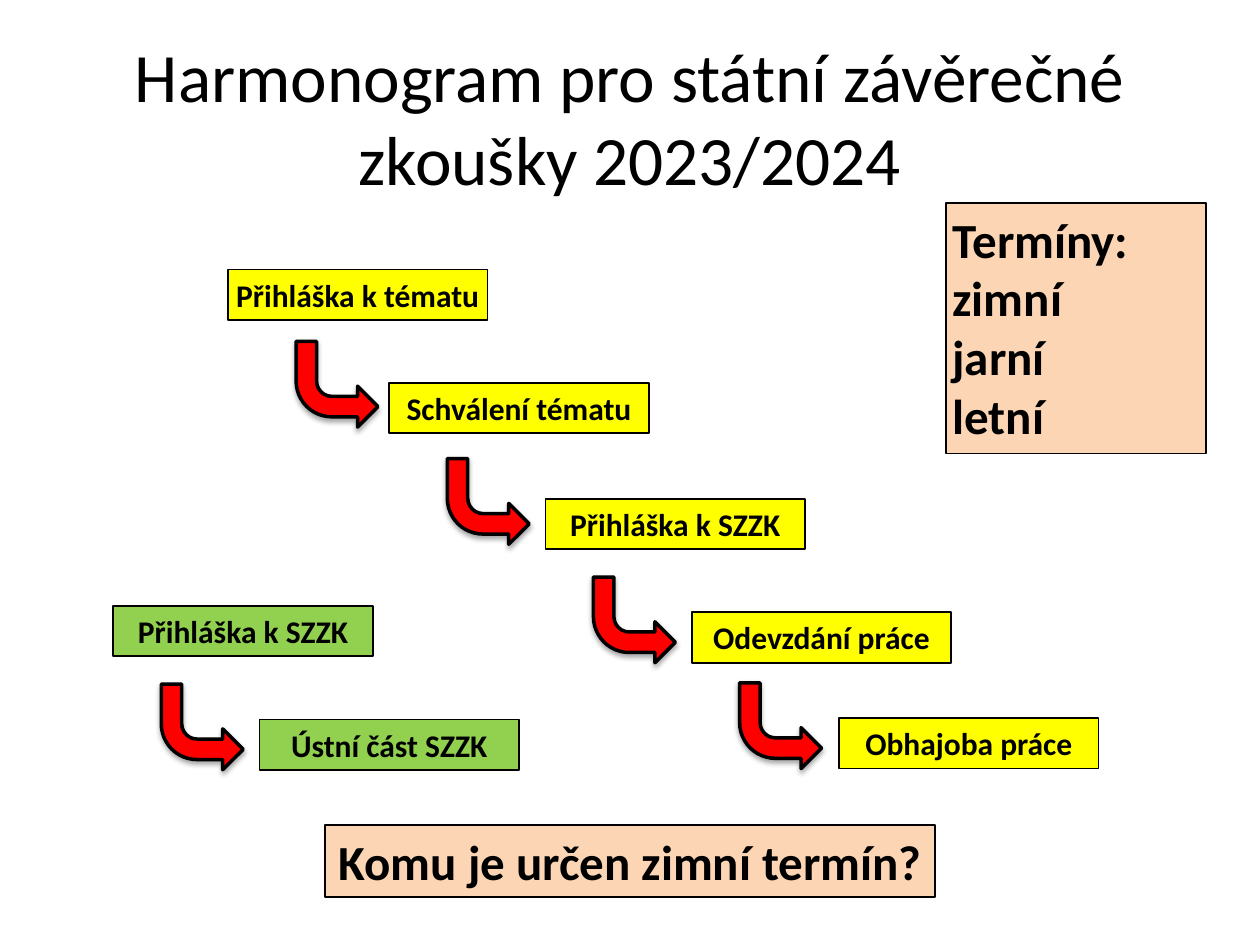
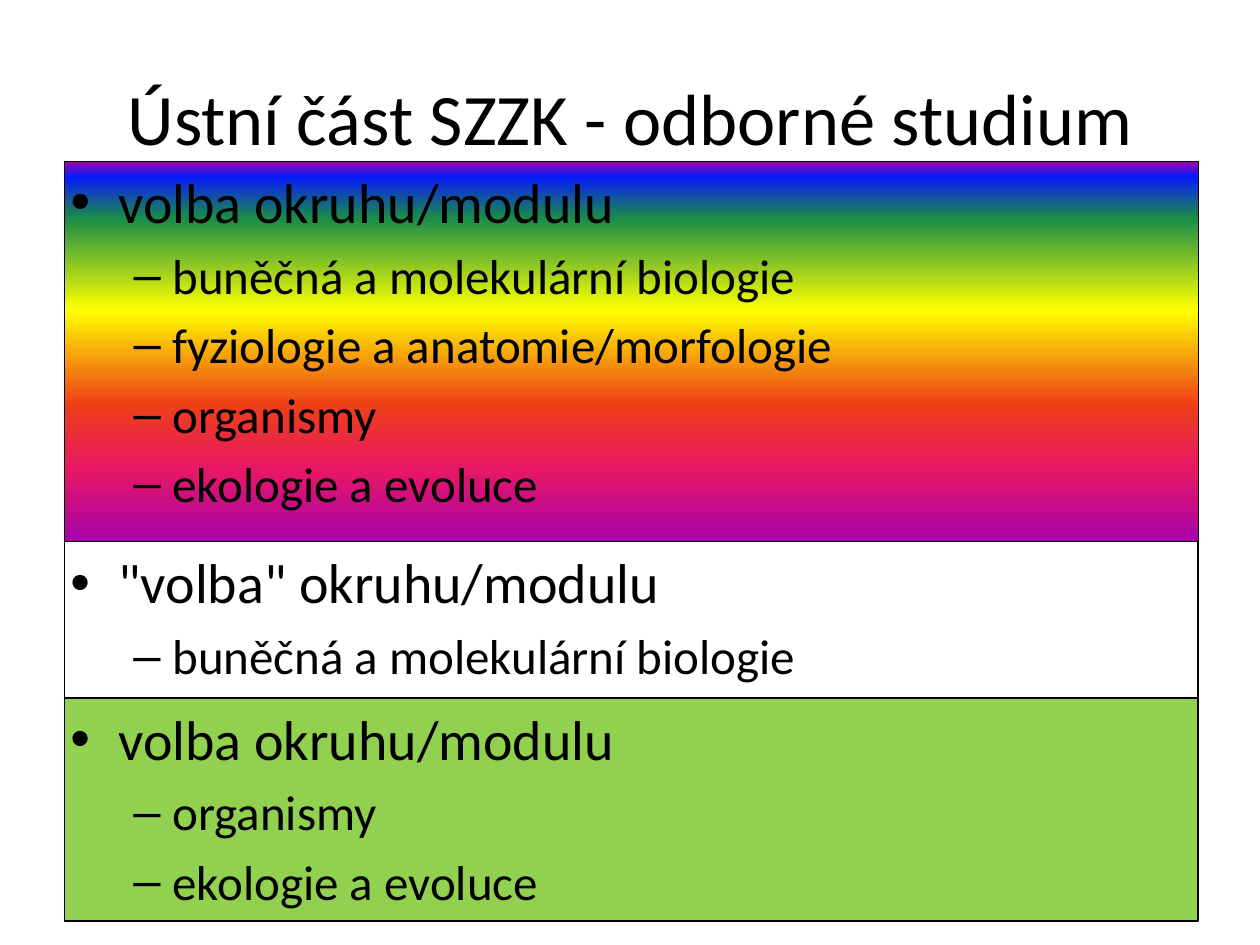
from lxml import etree
from pptx import Presentation
from pptx.dml.color import RGBColor
from pptx.enum.shapes import MSO_SHAPE
from pptx.enum.text import MSO_ANCHOR, MSO_AUTO_SIZE, PP_ALIGN
from pptx.oxml.ns import qn
from pptx.util import Inches, Pt

RECT, BENT_ARROW = MSO_SHAPE.RECTANGLE, MSO_SHAPE.BENT_ARROW
TOP, MIDDLE = MSO_ANCHOR.TOP, MSO_ANCHOR.MIDDLE
LEFT, CENTER = PP_ALIGN.LEFT, PP_ALIGN.CENTER
NO_FIT = MSO_AUTO_SIZE.NONE

BLACK = RGBColor(0x00, 0x00, 0x00)
YELLOW = RGBColor(0xFF, 0xFF, 0x00)
GREEN = RGBColor(0x92, 0xD0, 0x50)
PEACH = RGBColor(0xFC, 0xD5, 0xB5)
RED = RGBColor(0xFF, 0x00, 0x00)
RAINBOW = [
    (0, RGBColor(0xA6, 0x03, 0xAB)), (4, RGBColor(0x08, 0x19, 0xFB)),
    (15, RGBColor(0x1A, 0x8D, 0x48)), (39, YELLOW),
    (64, RGBColor(0xEE, 0x3F, 0x17)), (81, RGBColor(0xE8, 0x17, 0x66)),
    (100, RGBColor(0xA6, 0x03, 0xAB)),
]
FONT = "Calibri"
WIDTH, HEIGHT = 10, 7.5
TITLE_AT = (0.5, 0.3, 9, 1.25)
STEP_W, STEP_H = 2.06, 0.4
ARROW_W, ARROW_H = 0.65, 0.68

# Text, left and top of each step, then left and top of the arrow leading to it
THESIS_STEPS = [
    ("Přihláška k tématu", (1.81, 2.14), None),
    ("Schválení tématu", (3.09, 3.04), (2.35, 2.71)),
    ("Přihláška k SZZK", (4.33, 3.96), (3.55, 3.64)),
    ("Odevzdání práce", (5.49, 4.86), (4.71, 4.58)),
    ("Obhajoba práce", (6.66, 5.7), (5.87, 5.42)),
]
ORAL_STEPS = [
    ("Přihláška k SZZK", (0.9, 4.81), None),
    ("Ústní část SZZK", (2.06, 5.71), (1.28, 5.43)),
]

# Bullet, left margin, hanging indent, space before and size of each list level
LEVELS = [("•", 0.38, 0.38, 7, 32), ("–", 0.81, 0.31, 6, 28)]


def place(sp, at):
    sp.left, sp.top, sp.width, sp.height = map(Inches, at)


def outline(sp, width):
    sp.line.color.rgb = BLACK
    sp.line.width = Pt(width)


def set_font(p, size, bold=False):
    p.font.name = FONT
    p.font.size = Pt(size)
    p.font.bold = bold
    p.font.color.rgb = BLACK


def set_frame(tf, anchor):
    tf.word_wrap = True
    tf.auto_size = NO_FIT
    tf.vertical_anchor = anchor
    tf.margin_left = tf.margin_right = Inches(0.05)
    tf.margin_top = tf.margin_bottom = Inches(0.05)


def add_slide(prs, layout, title, size):
    s = prs.slides.add_slide(prs.slide_layouts.get_by_name(layout))
    sp = s.shapes.title
    place(sp, TITLE_AT)
    tf = sp.text_frame
    set_frame(tf, MIDDLE)
    tf.text = title
    tf.paragraphs[0].alignment = CENTER
    set_font(tf.paragraphs[0], size)
    return s


def add_rect(s, at, line_width, fill=None):
    sp = s.shapes.add_shape(RECT, *map(Inches, at))
    sp.shadow.inherit = False
    if fill is None:
        sp.fill.background()
    else:
        sp.fill.solid()
        sp.fill.fore_color.rgb = fill
    outline(sp, line_width)
    return sp


def add_label(s, text, at, fill, size, align=CENTER):
    tf = add_rect(s, at, 1, fill).text_frame
    set_frame(tf, TOP)
    tf.text = text
    for p in tf.paragraphs:
        p.alignment = align
        set_font(p, size, bold=True)


def add_arrow(s, left, top):
    sp = s.shapes.add_shape(BENT_ARROW, *map(Inches, (left, top, ARROW_W, ARROW_H)))
    sp.fill.solid()
    sp.fill.fore_color.rgb = RED
    outline(sp, 2)
    sp.shadow.inherit = False
    # Flip the bend downwards and add a soft shadow below
    spPr = sp._element.spPr
    spPr.find(qn("a:xfrm")).set("flipV", "1")
    shadow = etree.SubElement(
        spPr.find(qn("a:effectLst")), qn("a:outerShdw"), blurRad=str(Pt(3)),
        dist=str(Pt(1.8)), dir="5400000", rotWithShape="0")
    color = etree.SubElement(shadow, qn("a:srgbClr"), val=str(BLACK))
    etree.SubElement(color, qn("a:alpha"), val="35000")


def add_steps(s, steps, fill):
    for text, corner, arrow in steps:
        add_label(s, text, (*corner, STEP_W, STEP_H), fill, 18)
        if arrow:
            add_arrow(s, *arrow)


def fill_rainbow(sp):
    sp.fill.gradient()
    sp.fill.gradient_angle = 270
    stops = sp._element.spPr.find(".//" + qn("a:gsLst"))
    for stop in list(stops):
        stops.remove(stop)
    for share, color in RAINBOW:
        stop = etree.SubElement(stops, qn("a:gs"), pos=str(share * 1000))
        etree.SubElement(stop, qn("a:srgbClr"), val=str(color))


def write_list(sp, heading, items):
    tf = sp.text_frame
    set_frame(tf, TOP)
    tf.text = "\n".join([heading, *items])
    for i, p in enumerate(tf.paragraphs):
        p.level = min(i, 1)
        bullet, margin, hanging, space, size = LEVELS[p.level]
        p.alignment = LEFT
        p.space_before = Pt(space)
        set_font(p, size)
        pPr = p._p.get_or_add_pPr()
        pPr.set("marL", str(Inches(margin)))
        pPr.set("indent", str(-Inches(hanging)))
        mark = etree.Element(qn("a:buChar"), char=bullet)
        pPr.find(qn("a:defRPr")).addprevious(mark)
        face = etree.Element(qn("a:buFont"), typeface="Arial")
        mark.addprevious(face)


def build_schedule(prs):
    s = add_slide(prs, "Title Only",
                  "Harmonogram pro státní závěrečné zkoušky 2023/2024", 39.6)
    add_steps(s, THESIS_STEPS, YELLOW)
    add_steps(s, ORAL_STEPS, GREEN)
    add_label(s, "Termíny:\nzimní\njarní\nletní", (7.51, 1.61, STEP_W, 1.99),
              PEACH, 28, LEFT)
    question_w = 4.84
    add_label(s, "Komu je určen zimní termín?",
              ((WIDTH - question_w) / 2, 6.55, question_w, 0.57), PEACH, 28)


def build_oral_exam(prs):
    s = add_slide(prs, "Title and Content", "Ústní část SZZK - odborné studium", 41.4)
    left, width = 0.51, 9
    cells, organisms = "buněčná a molekulární biologie", ["organismy", "ekologie a evoluce"]

    # All modules
    body = s.placeholders[1]
    place(body, (left, 1.28, width, 3.02))
    fill_rainbow(body)
    outline(body, 0.75)
    write_list(body, "volba okruhu/modulu",
               [cells, "fyziologie a anatomie/morfologie", *organisms])

    # Narrower choices
    write_list(add_rect(s, (left, 4.3, width, 1.26), 0.75),
               '"volba" okruhu/modulu', [cells])
    write_list(add_rect(s, (left, 5.54, width, 1.77), 0.75, GREEN),
               "volba okruhu/modulu", organisms)


def main():
    prs = Presentation()
    prs.slide_width, prs.slide_height = Inches(WIDTH), Inches(HEIGHT)
    build_schedule(prs)
    build_oral_exam(prs)
    prs.save("out.pptx")


if __name__ == "__main__":
    main()
